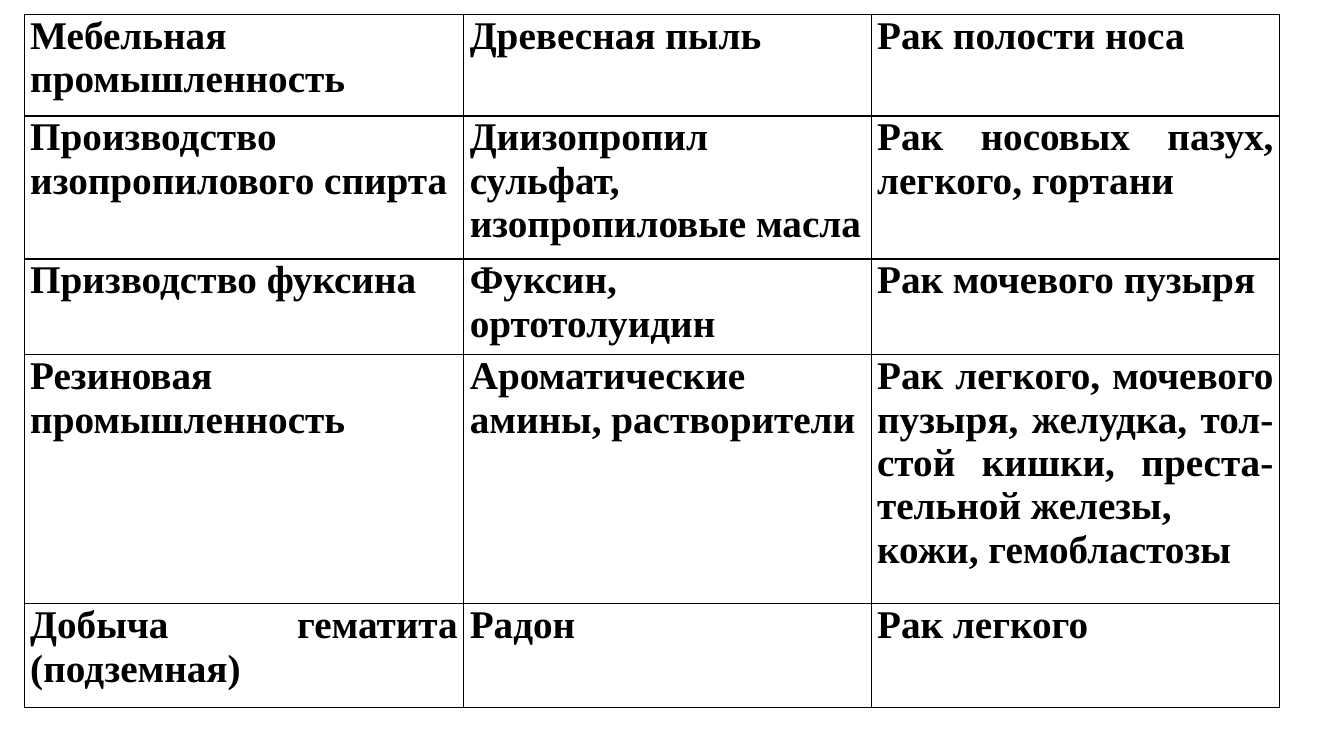
from lxml.etree import SubElement
from pptx import Presentation
from pptx.dml.color import RGBColor
from pptx.enum.text import PP_ALIGN as Align
from pptx.oxml.ns import qn
from pptx.util import Inches, Pt

INK = "000000"
FONT = {"name": "Times New Roman", "size": Pt(28), "bold": True}
INSETS = {"margin_left": Inches(0.06), "margin_right": Inches(0.06),
          "margin_top": 0, "margin_bottom": 0}
BOX = (0.24, 0.14, 12.45, 6.88)
COLS = (4.36, 4.04, 4.05)
ROWS = (1.01, 1.42, 0.95, 2.47, 1.03)
HAZARDS = (
    ("Мебельная промышленность", "Древесная пыль", "Рак полости носа"),
    ("Производство изопропилового спирта",
     "Диизопропил сульфат, изопропиловые масла",
     "Рак носовых пазух, легкого, гортани"),
    ("Призводство фуксина", "Фуксин, ортотолуидин", "Рак мочевого пузыря"),
    ("Резиновая промышленность", "Ароматические амины, растворители",
     "Рак легкого, мочевого пузыря, желудка, тол-стой кишки, "
     "преста-тельной железы,\nкожи, гемобластозы"),
    ("Добыча гематита (подземная)", "Радон", "Рак легкого"),
)


def color(code):
    return RGBColor.from_string(code)


def assign(target, values):
    for key, value in values.items():
        setattr(target, key, value)


def add_edges(cell):
    """Draw a thin line on all four sides of a cell."""
    props = cell._tc.get_or_add_tcPr()
    for side in ("a:lnL", "a:lnR", "a:lnT", "a:lnB"):
        line = SubElement(props, qn(side), w=str(Pt(1)))
        fill = SubElement(line, qn("a:solidFill"))
        SubElement(fill, qn("a:srgbClr"), val=INK)


def fill_cell(cell, text):
    cell.text = text
    assign(cell, INSETS)
    add_edges(cell)
    cell.fill.background()
    for para in cell.text_frame.paragraphs:
        para.alignment = Align.JUSTIFY
        for run in para.runs:
            assign(run.font, FONT)
            run.font.color.rgb = color(INK)


def add_hazards(slide, box):
    """Place the table of industries, agents and cancers in the box."""
    frame = slide.shapes.add_table(len(ROWS), len(COLS), *map(Inches, box))
    table = frame.table
    assign(table, {"first_row": False, "horz_banding": False})
    for col, width in zip(table.columns, COLS):
        col.width = Inches(width)
    for row, height, texts in zip(table.rows, ROWS, HAZARDS):
        row.height = Inches(height)
        for cell, text in zip(row.cells, texts):
            fill_cell(cell, text)


def main():
    deck = Presentation()
    assign(deck, {"slide_width": Inches(13.33), "slide_height": Inches(7.5)})
    slide = deck.slides.add_slide(deck.slide_layouts[6])
    add_hazards(slide, BOX)
    deck.save("out.pptx")


if __name__ == "__main__":
    main()
